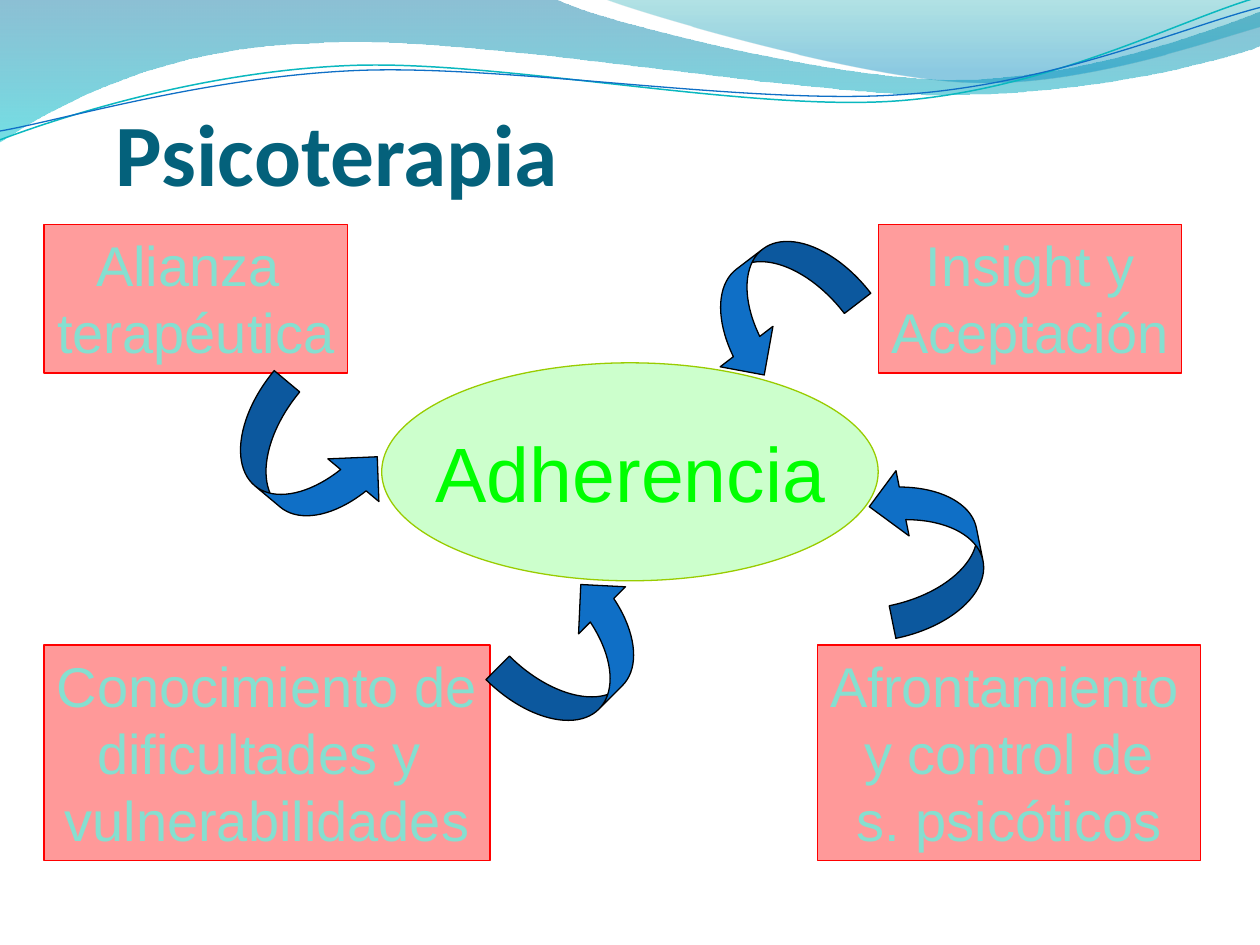
import math
import pptx
import pptx.util
import pptx.dml.color
import pptx.enum.shapes
import pptx.enum.text
import pptx.oxml
import pptx.oxml.ns
from dataclasses import dataclass

SHAPE = pptx.enum.shapes.MSO_SHAPE
ALIGN = pptx.enum.text.PP_ALIGN
ANCHOR = pptx.enum.text.MSO_ANCHOR
FIT = pptx.enum.text.MSO_AUTO_SIZE

# The slide is a grid of 10 columns by 7.5 rows of square cells
COLUMNS, ROWS = 10, 7.5
CELL = pptx.util.Inches(1)
WAVE_TILT = -2.7


@dataclass(frozen=True)
class Theme:
    title: str = "04617B"
    box: str = "FF0000"
    box_text: str = "85DFD0"
    oval: str = "CCFFCC"
    oval_line: str = "99CC00"
    oval_text: str = "00FF00"
    arrow: str = "0F6FC6"
    arrow_line: str = "000000"
    teal_line: str = "0AB8BF"
    title_size: float = 50
    oval_size: float = 44
    box_size: float = 32
    space_size: float = 18
    line_width: float = 0.75
    title_font: str = "Calibri"
    body_font: str = "Arial"


THEME = Theme()

# Bands: start, segments (one point = straight, three = curve), gradient stops
BANDS = [
    ((0, 0),
     [[(4.4, -0.01)],
      [(4.76, 0.17), (6.64, 0.63), (7.58, 0.63)],
      [(8.53, 0.63), (9.58, 0.26), (10, 0.09)],
      [(10.01, 0.36)],
      [(9.83, 0.44), (8.7, 0.76), (7.46, 0.75)],
      [(6.22, 0.75), (3.82, 0.28), (2.57, 0.34)],
      [(1.29, 0.36), (0.46, 0.83), (-0.01, 1.13)],
      [(0, 0)]],
     [(0, "0074A1", 45), (1, "00C6CF", 55)]),
    ((4.79, -0.01),
     [[(5.09, 0.11), (6.82, 0.62), (7.69, 0.65)],
      [(8.56, 0.69), (9.61, 0.32), (10, 0.21)],
      [(10, 0)],
      [(4.79, -0.01)]],
     [(0, "00A1A9", 30), (0.8, "008BBF", 45)]),
]

# Thin waves: centre, start, curves as they lie after tilting, colour, line width
WAVES = [
    ((4.99, 0.57), (0, 1.11),
     [[(0.48, 0.93), (1.58, 0.57), (2.77, 0.52)],
      [(3.95, 0.47), (5.93, 0.89), (7.13, 0.8)],
      [(8.33, 0.71), (9.38, 0.15), (9.98, -0.02)]],
     THEME.teal_line, 0.85),
    ((5, 0.59), (0, 1.04),
     [[(0.47, 0.96), (1.64, 0.61), (2.83, 0.56)],
      [(4.03, 0.51), (5.97, 0.84), (7.17, 0.75)],
      [(8.36, 0.67), (9.41, 0.21), (10, 0.06)]],
     THEME.arrow, 0.75),
]

# Factors: text, (left, top, width, height), opacity
ALLIANCE = ("Alianza \nterapéutica", (0.35, 1.78, 2.41, 1.18), 39)
KNOWLEDGE = ("Conocimiento de\ndificultades y \nvulnerabilidades",
             (0.35, 5.12, 3.54, 1.71), 40)
COPING = ("Afrontamiento\n y control de \ns. psicóticos", (6.49, 5.12, 3.04, 1.71), 40)
INSIGHT = ("Insight y\nAceptación", (6.97, 1.78, 2.41, 1.18), 39)

# Arrows towards the centre: left, top, rotation
ARROWS = [(2.03, 3.01, 309.9), (6.97, 3.67, 168.6),
          (4.21, 4.54, 224.9), (5.74, 1.75, 52.5)]


def grid(*cells):
    return [round(value * CELL) for value in cells]


def rgb(value):
    return pptx.dml.color.RGBColor.from_string(value)


def apply(target, values):
    for name, value in values.items():
        setattr(target, name, value)


def set_opacity(shape, percents):
    colours = shape.element.iter(pptx.oxml.ns.qn("a:srgbClr"))
    for colour, percent in zip(colours, percents):
        colour.append(pptx.oxml.parse_xml(
            f'<a:alpha {pptx.oxml.ns.nsdecls("a")} val="{percent * 1000}"/>'))


def set_line(shape, colour, width=THEME.line_width):
    shape.line.color.rgb = rgb(colour)
    shape.line.width = pptx.util.Pt(width)


def format_run(run, size, colour, font, bold=False):
    apply(run.font, {"size": pptx.util.Pt(size), "name": font, "bold": bold})
    run.font.color.rgb = rgb(colour)


def write(frame, text, align, *style):
    frame.text = text
    for paragraph in frame.paragraphs:
        paragraph.alignment = align
        for run in paragraph.runs:
            format_run(run, *style)


def add_outline(slide, start, segments, close):
    builder = slide.shapes.build_freeform(*grid(*start))
    points = [grid(*point) for segment in segments for point in segment]
    builder.add_line_segments(points, close=close)
    outline = builder.convert_to_shape()
    outline.shadow.inherit = False
    # Turn each run of three points into one curve
    corners = iter(list(outline.element.iter(pptx.oxml.ns.qn("a:lnTo"))))
    for segment in segments:
        steps = [next(corners) for _ in segment]
        if len(steps) == 3:
            curve = pptx.oxml.parse_xml(f'<a:cubicBezTo {pptx.oxml.ns.nsdecls("a")}/>')
            steps[0].addprevious(curve)
            for step in steps:
                curve.append(step[0])
                step.getparent().remove(step)
    return outline


def add_band(slide, start, segments, stops):
    band = add_outline(slide, start, segments, True)
    band.fill.gradient()
    band.fill.gradient_angle = 270
    for stop, (position, colour, _) in zip(band.fill.gradient_stops, stops):
        stop.color.rgb = rgb(colour)
        stop.position = position
    set_opacity(band, [opacity for _, _, opacity in stops])
    band.line.fill.background()


def level(point, centre):
    turn = math.radians(-WAVE_TILT)
    x, y = point[0] - centre[0], point[1] - centre[1]
    return (centre[0] + x * math.cos(turn) - y * math.sin(turn),
            centre[1] + x * math.sin(turn) + y * math.cos(turn))


def add_wave(slide, centre, start, curves, colour, width):
    flat = [[level(point, centre) for point in curve] for curve in curves]
    wave = add_outline(slide, level(start, centre), flat, False)
    wave.rotation = WAVE_TILT
    wave.fill.background()
    set_line(wave, colour, width)


def add_figure(slide, preset, place, fill, line):
    figure = slide.shapes.add_shape(preset, *grid(*place))
    figure.shadow.inherit = False
    figure.fill.solid()
    figure.fill.fore_color.rgb = rgb(fill)
    set_line(figure, line)
    return figure


def add_factor(slide, text, place, opacity):
    factor = add_figure(slide, SHAPE.RECTANGLE, place, THEME.box, THEME.box)
    set_opacity(factor, [opacity])
    apply(factor.text_frame, {"word_wrap": False, "vertical_anchor": ANCHOR.TOP,
                              "auto_size": FIT.SHAPE_TO_FIT_TEXT})
    write(factor.text_frame, text, ALIGN.CENTER,
          THEME.box_size, THEME.box_text, THEME.body_font)
    return factor


def add_arrow(slide, left, top, rotation):
    arrow = add_figure(slide, SHAPE.CURVED_RIGHT_ARROW, (left, top, 0.8, 1.33),
                       THEME.arrow, THEME.arrow_line)
    arrow.rotation = rotation
    for index, value in enumerate((0.33, 0.66, 0.33)):
        arrow.adjustments[index] = value


def add_centre(slide):
    add_figure(slide, SHAPE.OVAL, (3.03, 2.88, 3.94, 1.73), THEME.oval, THEME.oval_line)
    label = slide.shapes.add_textbox(*grid(3.36, 3.33, 3.33, 0.84)).text_frame
    apply(label, {"word_wrap": False, "auto_size": FIT.SHAPE_TO_FIT_TEXT})
    write(label, "Adherencia", ALIGN.LEFT,
          THEME.oval_size, THEME.oval_text, THEME.body_font)


def set_title(slide):
    title = slide.shapes.title
    title.element.getparent().append(title.element)  # in front of the waves
    apply(title, dict(zip(("left", "top", "width", "height"),
                          grid(0.86, 0.37, 5.31, 1.25))))
    margin_left, margin_top = grid(0.06, 0.05)
    apply(title.text_frame, {"margin_left": margin_left, "margin_top": margin_top,
                             "margin_right": 0, "margin_bottom": 0,
                             "vertical_anchor": ANCHOR.BOTTOM, "auto_size": FIT.NONE})
    write(title.text_frame, "Psicoterapia", ALIGN.LEFT,
          THEME.title_size, THEME.title, THEME.title_font, True)


def main():
    deck = pptx.Presentation()
    deck.slide_width, deck.slide_height = grid(COLUMNS, ROWS)
    slide = deck.slides.add_slide(deck.slide_layouts[5])
    # Header decoration and title
    for band in BANDS:
        add_band(slide, *band)
    for wave in WAVES:
        add_wave(slide, *wave)
    set_title(slide)
    # Central idea, the factors and their arrows
    add_centre(slide)
    add_factor(slide, *ALLIANCE)
    add_factor(slide, *KNOWLEDGE)
    coping = add_factor(slide, *COPING)
    space = coping.text_frame.paragraphs[0].add_run()
    space.text = " "
    format_run(space, THEME.space_size, THEME.box_text, THEME.body_font)
    for arrow in ARROWS:
        add_arrow(slide, *arrow)
    add_factor(slide, *INSIGHT)
    deck.save("out.pptx")


if __name__ == "__main__":
    main()
